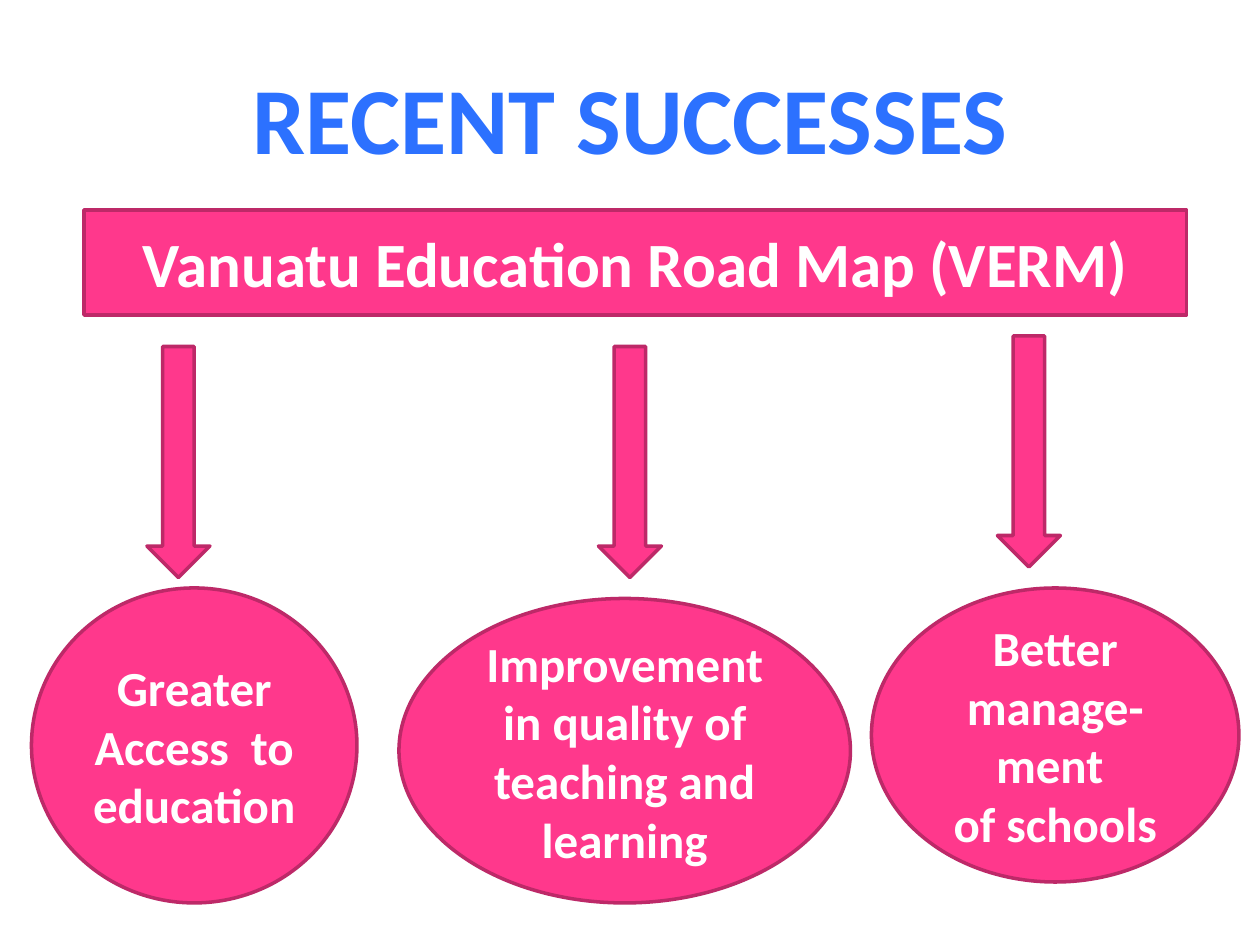
"""Build the Recent Successes slide: a road map banner leading to three outcomes."""
import pptx
import pptx.util
import pptx.dml.color
import pptx.enum.shapes
import pptx.enum.text

Pt = pptx.util.Pt
SHAPES = pptx.enum.shapes.MSO_SHAPE
COLOURS = {"title": "2C71FF", "fill": "FF388C", "line": "BD2968", "text": "FFFFFF"}

TITLE = ("RECENT SUCCESSES", (36, 21.6, 648, 90))
BANNER = ("Vanuatu Education Road Map (VERM)", (48, 120, 630, 60))
ARROW_SIZE = (36, 132)
ARROWS = [(84, 198), (342, 198), (570, 192)]
OUTCOMES = [
    ("Greater Access  to education", (18, 336, 186, 180)),
    ("Better manage-ment \nof schools", (498, 336, 210, 168)),
    ("Improvement in quality of teaching and learning", (228, 342, 258, 174)),
]


def colour(name):
    """Return the named palette colour."""
    return pptx.dml.color.RGBColor.from_string(COLOURS[name])


def write(box, text, size, colour_name):
    """Fill a shape with centred bold text."""
    frame = box.text_frame
    frame.text = text
    frame.word_wrap = True
    frame.vertical_anchor = pptx.enum.text.MSO_ANCHOR.MIDDLE
    for para in frame.paragraphs:
        para.alignment = pptx.enum.text.PP_ALIGN.CENTER
        para.font.name = "Calibri"
        para.font.size = Pt(size)
        para.font.bold = True
        para.font.color.rgb = colour(colour_name)


def add_pink_shape(page, kind, bounds):
    """Add a pink outlined shape at the given bounds."""
    box = page.shapes.add_shape(kind, *map(Pt, bounds))
    box.shadow.inherit = False
    box.fill.solid()
    box.fill.fore_color.rgb = colour("fill")
    box.line.color.rgb = colour("line")
    box.line.width = Pt(2)
    return box


def main():
    """Build and save the deck."""
    deck = pptx.Presentation()
    deck.slide_width, deck.slide_height = Pt(720), Pt(540)
    page = deck.slides.add_slide(deck.slide_layouts[5])

    text, bounds = TITLE
    title = page.shapes.title
    title.left, title.top, title.width, title.height = map(Pt, bounds)
    write(title, text, 54, "title")

    text, bounds = BANNER
    write(add_pink_shape(page, SHAPES.RECTANGLE, bounds), text, 36, "text")
    for corner in ARROWS:
        add_pink_shape(page, SHAPES.DOWN_ARROW, corner + ARROW_SIZE)
    for text, bounds in OUTCOMES:
        write(add_pink_shape(page, SHAPES.OVAL, bounds), text, 28, "text")

    deck.save("out.pptx")


if __name__ == "__main__":
    main()
